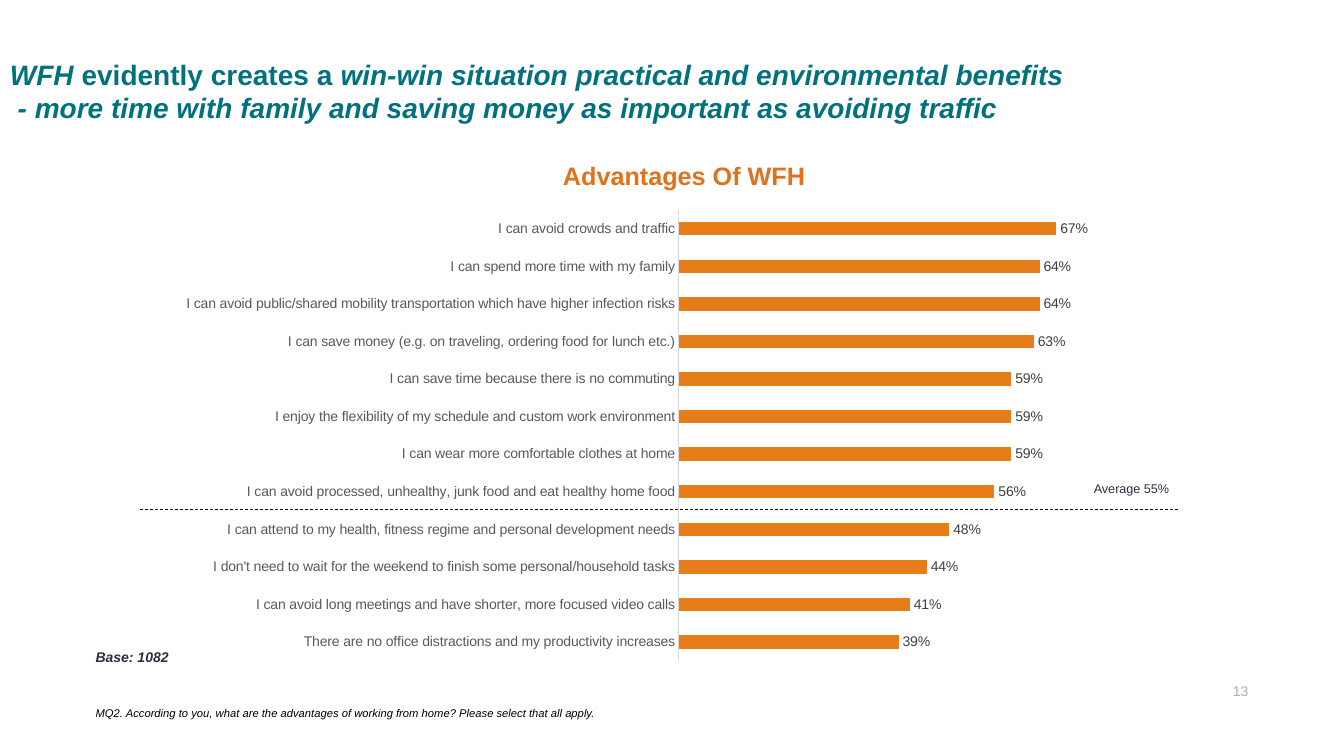
from lxml import etree
from pptx import Presentation
from pptx import util as u
from pptx.chart import data
from pptx.dml import color
from pptx.enum import chart as ec, dml, shapes, text
from pptx.oxml import parse_xml, ns


def paint(fmt, code):
    fmt.solid()
    fmt.fore_color.rgb = color.RGBColor.from_string(code)


def style(font, size, code, bold=False, slant=False):
    font.name, font.size = "Arial", u.Pt(size)
    font.bold, font.italic = bold, slant
    paint(font.fill, code)


deck = Presentation()
deck.slide_width, deck.slide_height = u.Inches(13.33), u.Inches(7.5)
slide = deck.slides.add_slide(deck.slide_layouts[6])

rows = [
    ("I can avoid crowds and traffic", 0.67),
    ("I can spend more time with my family", 0.64),
    ("I can avoid public/shared mobility transportation which have higher infection risks", 0.64),
    ("I can save money (e.g. on traveling, ordering food for lunch etc.)", 0.63),
    ("I can save time because there is no commuting", 0.59),
    ("I enjoy the flexibility of my schedule and custom work environment", 0.59),
    ("I can wear more comfortable clothes at home", 0.59),
    ("I can avoid processed, unhealthy, junk food and eat healthy home food", 0.56),
    ("I can attend to my health, fitness regime and personal development needs", 0.48),
    ("I don't need to wait for the weekend to finish some personal/household tasks", 0.44),
    ("I can avoid long meetings and have shorter, more focused video calls", 0.41),
    ("There are no office distractions and my productivity increases", 0.39),
]
table = data.CategoryChartData(number_format="0%")
table.categories = [name for name, share in rows]
table.add_series("Series 1", [share for name, share in rows])
chart = slide.shapes.add_chart(
    ec.XL_CHART_TYPE.BAR_CLUSTERED,
    u.Inches(1.68), u.Inches(1.99), u.Inches(9.72), u.Inches(4.66), table).chart
chart.has_legend = chart.has_title = False
style(chart.font, 10, "000000")

names = chart.category_axis
names.reverse_order = True
names.major_tick_mark = names.minor_tick_mark = ec.XL_TICK_MARK.NONE
style(names.tick_labels.font, 10, "595959")
paint(names.format.line.fill, "D9D9D9")
names.format.line.width = u.Pt(0.75)
scale = chart.value_axis
scale.visible = scale.has_major_gridlines = False
scale.minimum_scale, scale.maximum_scale = 0, 0.8

plot = chart.plots[0]
plot.gap_width = 182
plot.vary_by_categories = False
bars = plot.series[0]
paint(bars.format.fill, "E77D18")
marks = bars.data_labels
marks.show_value = True
marks.position = ec.XL_LABEL_POSITION.OUTSIDE_END
marks.number_format, marks.number_format_is_linked = "0%", False
style(marks.font, 10, "404040")

area = plot._element.getparent()
for old in area.findall(ns.qn("c:layout")):
    area.remove(old)
area.insert(0, parse_xml(
    f'<c:layout {ns.nsdecls("c")}><c:manualLayout><c:layoutTarget val="inner"/>'
    '<c:xMode val="edge"/><c:yMode val="edge"/><c:x val="0.52"/><c:y val="0.02"/>'
    '<c:w val="0.46"/><c:h val="0.96"/></c:manualLayout></c:layout>'))

rule = slide.shapes.add_connector(
    shapes.MSO_CONNECTOR.STRAIGHT,
    u.Inches(1.39), u.Inches(5.05), u.Inches(11.68), u.Inches(5.05))
paint(rule.line.fill, "000000")
rule.line.width = u.Pt(0.5)
rule.line.dash_style = dml.MSO_LINE.DASH
etree.SubElement(rule._element.spPr, ns.qn("a:effectLst"))

left, mid, right = text.PP_ALIGN.LEFT, text.PP_ALIGN.CENTER, text.PP_ALIGN.RIGHT
title = [
    [("WFH", True), (" evidently creates a ", False),
     ("win-win situation practical and environmental benefits", True)],
    [(" - more time with family and saving money as important as avoiding traffic", True)],
]
query = "MQ2. According to you, what are the advantages of working from home? Please select that all apply."
notes = [
    ((0, 0.52, 13.23, 0.77), title, 20, "00727D", True, left),
    ((4.83, 1.54, 3.91, 0.4), [[("Advantages Of WFH", False)]], 18, "E1711B", True, mid),
    ((10.75, 4.72, 1.03, 0.25), [[("Average 55%", False)]], 9, "332C41", False, left),
    ((0.85, 6.38, 1.78, 0.27), [[("Base: 1082", True)]], 10, "332C41", True, left),
    ((0.85, 6.96, 8.15, 0.24), [[(query, True)]], 8, "000000", False, left),
    ((11.42, 6.72, 1.06, 0.27), [[("13", False)]], 10, "332C41", False, right),
]
for place, lines, size, code, bold, align in notes:
    frame = slide.shapes.add_textbox(*map(u.Inches, place)).text_frame
    frame.word_wrap = True
    frame.auto_size = text.MSO_AUTO_SIZE.SHAPE_TO_FIT_TEXT
    for i, parts in enumerate(lines):
        para = frame.add_paragraph() if i else frame.paragraphs[0]
        para.alignment = align
        for words, slant in parts:
            run = para.add_run()
            run.text = words
            style(run.font, size, code, bold, slant)

tint = run._r.find(".//" + ns.qn("a:srgbClr"))
etree.SubElement(tint, ns.qn("a:alpha")).set("val", "40000")

deck.save("out.pptx")
